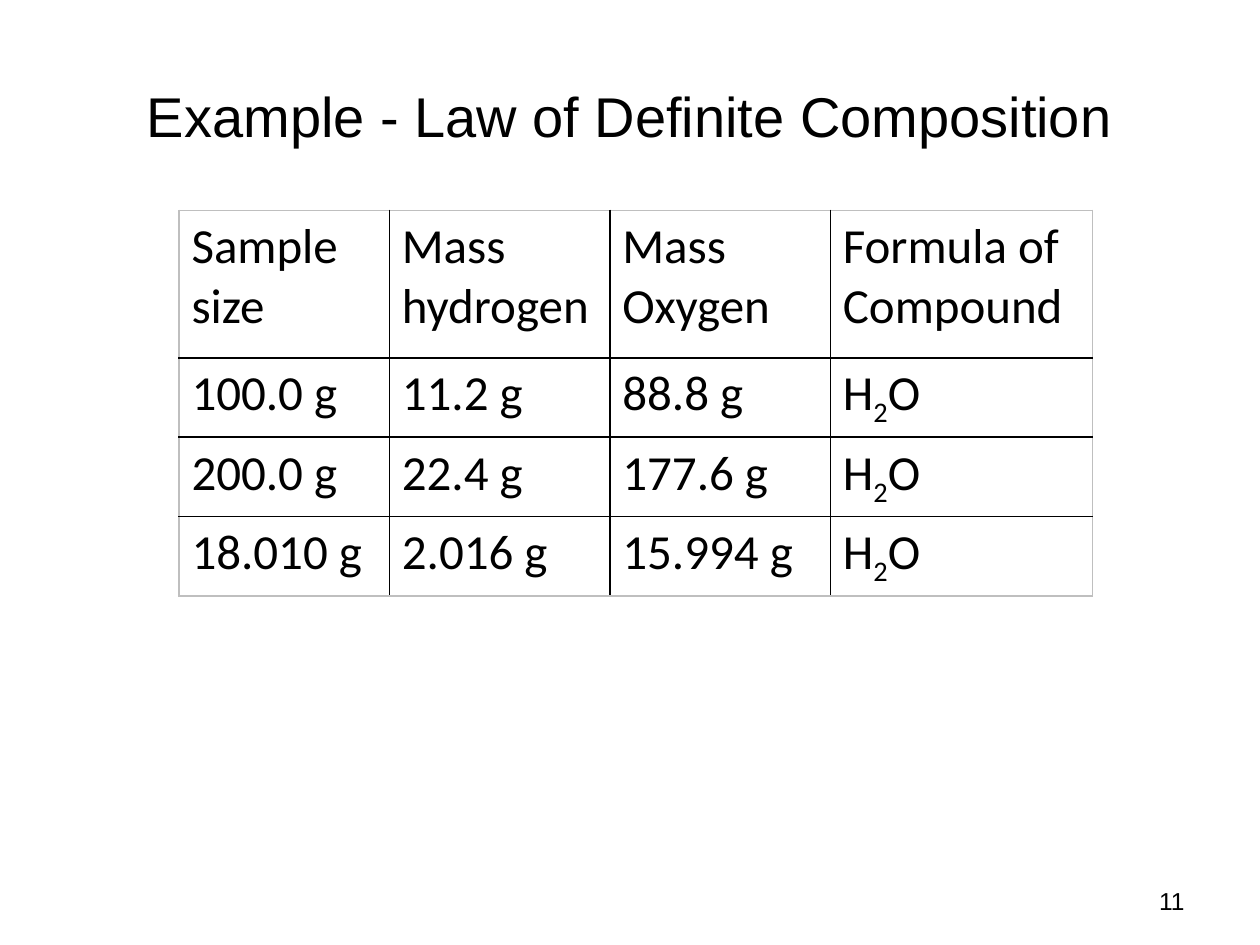
"""Build a slide with a table on the law of definite composition."""
from typing import NamedTuple

from lxml.etree import SubElement
from pptx import Presentation
from pptx.dml.color import RGBColor
from pptx.enum.text import MSO_ANCHOR, PP_ALIGN
from pptx.oxml.ns import qn
from pptx.util import Inches, Pt

COLORS = {"text": "000000", "grid": "000000", "frame": "BFBFBF", "paper": "FFFFFF"}
COLUMN_WIDTHS = (1.67, 1.75, 1.75, 2.08)
ROW_HEIGHTS = (1.17, 0.63, 0.63, 0.63)
HEADINGS = ("Sample size", "Mass hydrogen", "Mass Oxygen", "Formula of Compound")
WATER = ("H", "2", "O")


class Sample(NamedTuple):
    size: str
    hydrogen: str
    oxygen: str
    formula: tuple[str, ...] = WATER


SAMPLES = (
    Sample("100.0 g", "11.2 g", "88.8 g"),
    Sample("200.0 g", "22.4 g", "177.6 g"),
    Sample("18.010 g", "2.016 g", "15.994 g"),
)


def write(paragraph, text: str, *, size: float, font: str, align=PP_ALIGN.LEFT,
          subscript: bool = False) -> None:
    paragraph.alignment = align
    span = paragraph.add_run()
    span.text = text
    span.font.size = Pt(size)
    span.font.name = font
    span.font.color.rgb = RGBColor.from_string(COLORS["text"])
    if subscript:
        span._r.get_or_add_rPr().set("baseline", "-25000")


def place(box, left: float, top: float, width: float, height: float) -> None:
    box.left, box.top = Inches(left), Inches(top)
    box.width, box.height = Inches(width), Inches(height)
    box.text_frame.word_wrap = True
    box.text_frame.vertical_anchor = MSO_ANCHOR.MIDDLE


def draw_border(cell, side: str, color: str) -> None:
    line = SubElement(cell._tc.get_or_add_tcPr(), qn(f"a:ln{side}"), w=str(Pt(1)))
    fill = SubElement(line, qn("a:solidFill"))
    SubElement(fill, qn("a:srgbClr"), val=color)


def draw_table(page, rows: list[tuple]) -> None:
    frame = page.shapes.add_table(
        len(rows), len(COLUMN_WIDTHS), Inches(1.42), Inches(1.67),
        Inches(sum(COLUMN_WIDTHS)), Inches(sum(ROW_HEIGHTS)))
    table = frame.table
    table.first_row = False
    table.horz_banding = False
    for column, width in zip(table.columns, COLUMN_WIDTHS):
        column.width = Inches(width)
    for row, height in zip(table.rows, ROW_HEIGHTS):
        row.height = Inches(height)
    for row_index, values in enumerate(rows):
        for column_index, value in enumerate(values):
            cell = table.cell(row_index, column_index)
            outer_sides = {
                "L": column_index == 0,
                "R": column_index == len(values) - 1,
                "T": row_index == 0,
                "B": row_index == len(rows) - 1,
            }
            for side, outer in outer_sides.items():
                draw_border(cell, side, COLORS["frame" if outer else "grid"])
            cell.fill.solid()
            cell.fill.fore_color.rgb = RGBColor.from_string(COLORS["paper"])
            parts = (value,) if isinstance(value, str) else value
            for part in parts:
                write(cell.text_frame.paragraphs[0], part, size=28, font="Calibri",
                      subscript=part.isdigit())


def main() -> None:
    deck = Presentation()
    deck.slide_width, deck.slide_height = Inches(10), Inches(7.5)
    page = deck.slides.add_slide(deck.slide_layouts[5])

    title = page.shapes.title
    place(title, 0.75, 0.5, 8.5, 0.83)
    write(title.text_frame.paragraphs[0], "Example - Law of Definite Composition",
          size=32, font="Arial", align=PP_ALIGN.CENTER)

    draw_table(page, [HEADINGS, *SAMPLES])

    number = page.shapes.add_textbox(0, 0, 0, 0)
    place(number, 7.17, 6.95, 2.33, 0.4)
    write(number.text_frame.paragraphs[0], "11", size=14, font="Arial",
          align=PP_ALIGN.RIGHT)

    deck.save("out.pptx")


if __name__ == "__main__":
    main()
